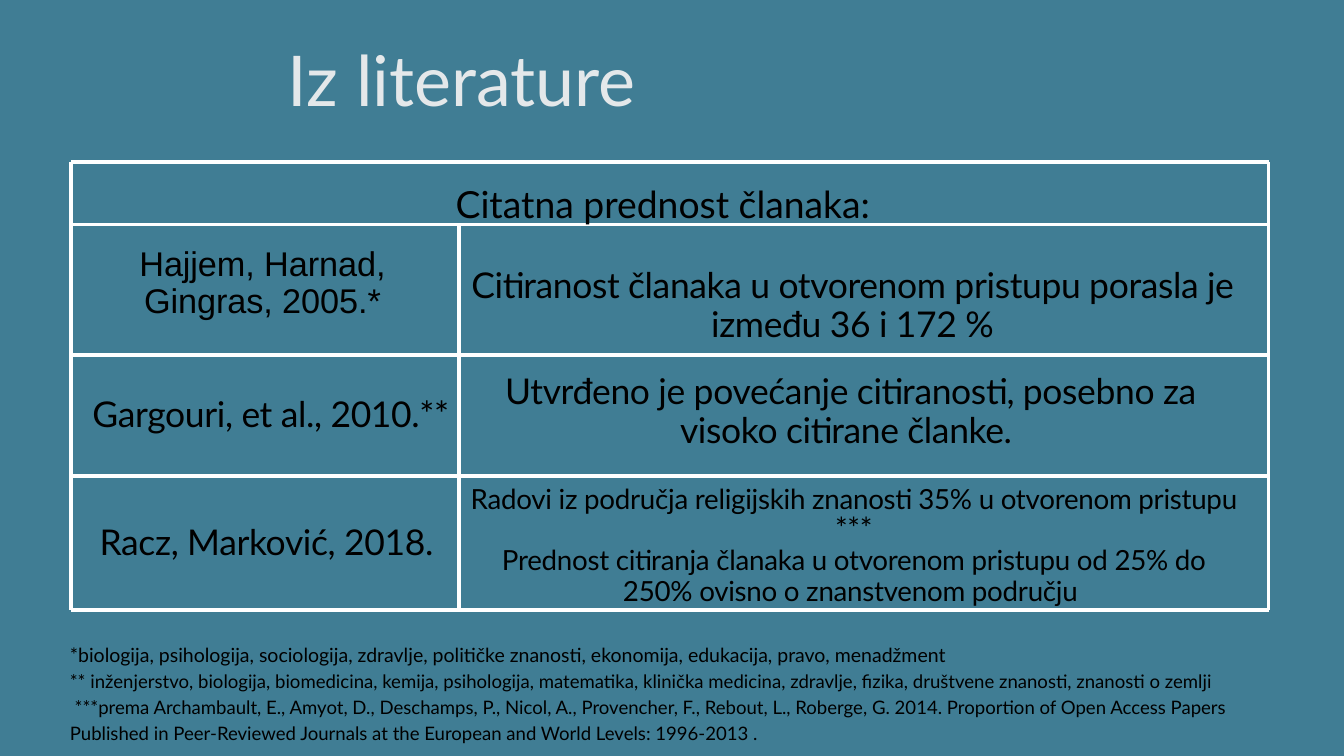
from collections import namedtuple
from dataclasses import dataclass

from lxml import etree
from pptx import Presentation
from pptx.dml.color import RGBColor
from pptx.enum.shapes import MSO_CONNECTOR
from pptx.enum.text import MSO_AUTO_SIZE, PP_ALIGN
from pptx.oxml.ns import qn
from pptx.util import Inches, Pt

Style = namedtuple("Style", "size leading tracking font color",
                   defaults=(0, "Lato", "000000"))


@dataclass(frozen=True)
class Theme:
    background: str = "407D94"
    rule: str = "FFFFFF"
    rule_width: float = 3.75
    title: Style = Style(75, 105, color="E4E8EA")
    heading: Style = Style(40, 56)
    cell: Style = Style(38, 41.8, -0.4)
    first_source: Style = Style(36.7, 40.4, -0.1, "Arial")
    finding: Style = Style(29.7, 32.7, -0.3)
    stars: Style = Style(32, 32.7, -0.4)
    first_note: Style = Style(20.9, 29.2)
    note: Style = Style(19.9, 27.8)


THEME = Theme()
COLUMNS, ROWS = 20, 11.25
COL = ROW = Inches(1)

prs = Presentation()
prs.slide_width, prs.slide_height = int(COLUMNS * COL), int(ROWS * ROW)
slide = prs.slides.add_slide(prs.slide_layouts[6])
slide.background.fill.solid()
slide.background.fill.fore_color.rgb = RGBColor.from_string(THEME.background)


def add_rule(x1, y1, x2, y2):
    rule = slide.shapes.add_connector(
        MSO_CONNECTOR.STRAIGHT,
        int(x1 * COL), int(y1 * ROW), int(x2 * COL), int(y2 * ROW))
    rule.line.color.rgb = RGBColor.from_string(THEME.rule)
    rule.line.width = Pt(THEME.rule_width)
    etree.SubElement(rule._element.spPr, qn("a:effectLst"))


def add_text(left, top, width, height, paragraphs, align=PP_ALIGN.CENTER):
    """Each paragraph is a list of (text, style) runs."""
    frame = slide.shapes.add_textbox(
        int(left * COL), int(top * ROW), int(width * COL), int(height * ROW)
    ).text_frame
    frame.word_wrap = True
    frame.auto_size = MSO_AUTO_SIZE.SHAPE_TO_FIT_TEXT
    frame.margin_left = frame.margin_right = 0
    frame.margin_top = frame.margin_bottom = 0
    for index, runs in enumerate(paragraphs):
        paragraph = frame.add_paragraph() if index else frame.paragraphs[0]
        paragraph.alignment = align
        paragraph.line_spacing = Pt(runs[0][1].leading)
        for text, style in runs:
            run = paragraph.add_run()
            run.text = text
            run.font.size = Pt(style.size)
            run.font.name = style.font
            run.font.color.rgb = RGBColor.from_string(style.color)
            if style.tracking:
                run._r.get_or_add_rPr().set("spc", str(round(style.tracking * 100)))


# Ruled frame: a full-width heading row above three rows of two columns
left_edge, divider, right_edge = 1.06, 6.83, 18.88
row_edges = [2.41, 3.34, 5.28, 7.08, 9.08]
top_edge, heading_edge, bottom_edge = row_edges[0], row_edges[1], row_edges[-1]
for y in row_edges:
    add_rule(left_edge, y, right_edge, y)
for x, start in [(left_edge, top_edge), (divider, heading_edge), (right_edge, top_edge)]:
    add_rule(x, start, x, bottom_edge)

add_text(2.55, 0.34, 8.64, 1.41, [[("Iz literature", THEME.title)]])
add_text(left_edge, 2.59, 17.75, 0.75,
         [[("Citatna prednost članaka: ", THEME.heading)]])

# Sources in the left column
sources = [
    (1.14, 3.65, 5.53, 1.68, "Hajjem, Harnad, Gingras, 2005.*", THEME.first_source),
    (1.24, 5.88, 5.58, 0.59, "Gargouri, et al., 2010.**", THEME.cell),
    (1.36, 7.79, 5.34, 0.59, "Racz, Marković, 2018. ", THEME.cell),
]
for left, top, width, height, source, style in sources:
    add_text(left, top, width, height, [[(source, style)]])

# Findings in the right column
findings_left = 6.97
findings = [
    (3.96, 11.43, 1.74, [[(
        "Citiranost članaka u otvorenom pristupu porasla je između 36 i 172 %",
        THEME.cell)]]),
    (5.54, 11.37, 1.17, [[(
        "Utvrđeno je povećanje citiranosti, posebno za visoko citirane članke. ",
        THEME.cell)]]),
    (7.21, 11.47, 2.4, [
        [("Radovi iz područja religijskih znanosti 35% u otvorenom pristupu ",
          THEME.finding), ("***", THEME.stars)],
        [("Prednost citiranja članaka u otvorenom pristupu od 25% do 250% "
          "ovisno o znanstvenom području ", THEME.finding)],
    ]),
]
for top, width, height, paragraphs in findings:
    add_text(findings_left, top, width, height, paragraphs)

footnotes = [
    [("*biologija, psihologija, sociologija, zdravlje, političke znanosti, "
      "ekonomija, edukacija, pravo, menadžment", THEME.first_note)],
    [("** inženjerstvo, biologija, biomedicina, kemija, psihologija, matematika, "
      "klinička medicina, zdravlje, fizika, društvene znanosti, znanosti o zemlji",
      THEME.note)],
    [(" ***prema Archambault, E., Amyot, D., Deschamps, P., Nicol, A., "
      "Provencher, F., Rebout, L., Roberge, G. 2014. Proportion of Open Access "
      "Papers Published in Peer-Reviewed Journals at the European and World "
      "Levels: 1996-2013 .", THEME.note)],
]
add_text(1.04, 9.51, 17.8, 1.55, footnotes, PP_ALIGN.LEFT)

prs.save("out.pptx")
